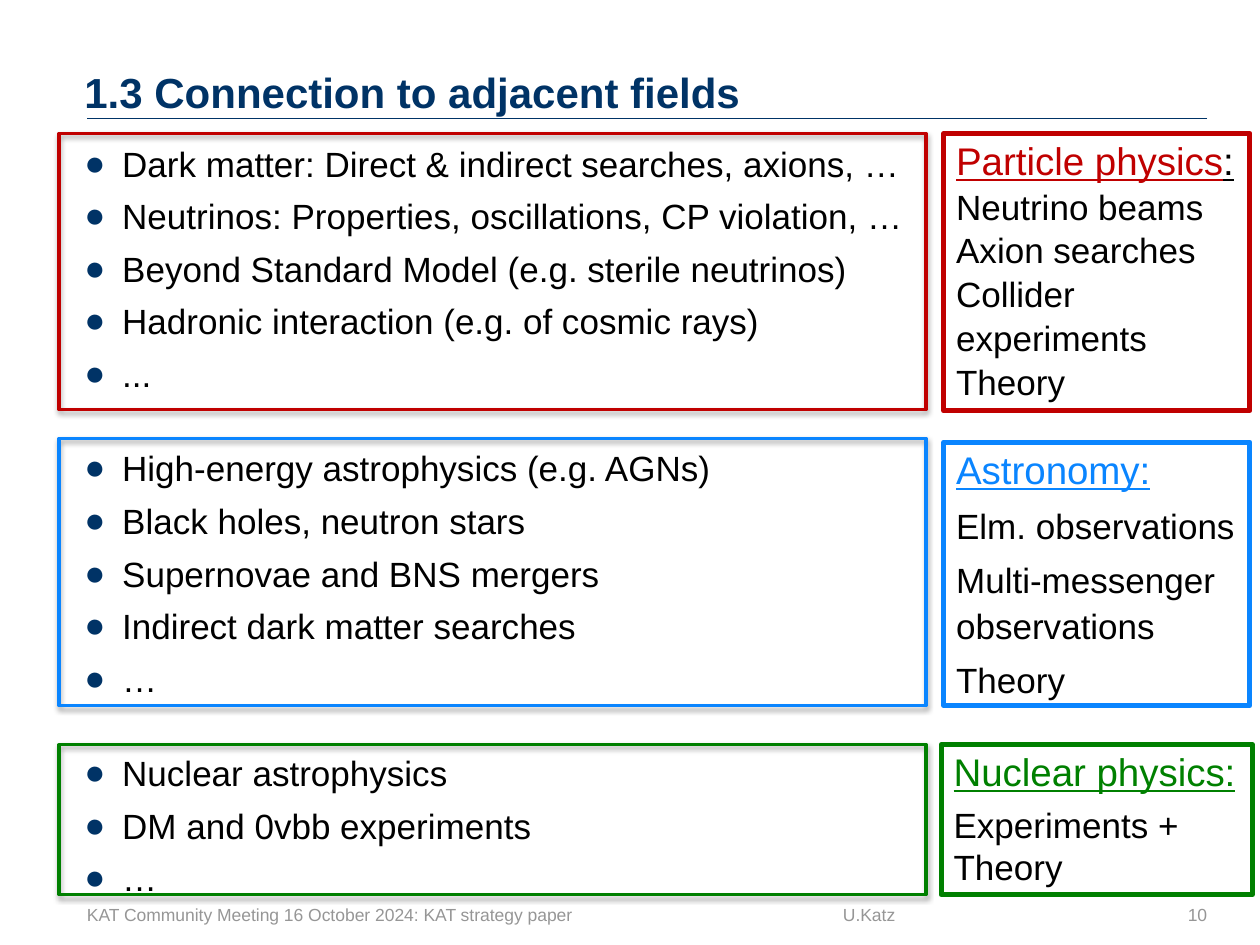
from lxml import etree
from pptx import Presentation
from pptx.dml.color import RGBColor
from pptx.enum.shapes import MSO_CONNECTOR, MSO_SHAPE
from pptx.enum.text import MSO_ANCHOR, MSO_AUTO_SIZE, PP_ALIGN
from pptx.oxml import parse_xml
from pptx.oxml.ns import qn
from pptx.util import Inches, Pt

STRAIGHT = MSO_CONNECTOR.STRAIGHT
RECTANGLE = MSO_SHAPE.RECTANGLE
TOP, MIDDLE, BOTTOM = MSO_ANCHOR.TOP, MSO_ANCHOR.MIDDLE, MSO_ANCHOR.BOTTOM
LEFT, RIGHT = PP_ALIGN.LEFT, PP_ALIGN.RIGHT
GROW = MSO_AUTO_SIZE.SHAPE_TO_FIT_TEXT

COLORS = {
    "navy": "003366",
    "gray": "969696",
    "black": "000000",
    "particle": "C00000",
    "astronomy": "0A85FF",
    "nuclear": "008000",
}

FIELDS = [
    {
        "color": "particle",
        "frame": (0.47, 1.06, 6.88, 2.19),
        "panel": (7.49, 1.06, 2.43, 2.2),
        "topics": [
            "Dark matter: Direct & indirect searches, axions, …",
            "Neutrinos: Properties, oscillations, CP violation, …",
            "Beyond Standard Model (e.g. sterile neutrinos)",
            "Hadronic interaction (e.g. of cosmic rays)",
            "...",
        ],
        "heading": [("Particle physics", "particle"), (":", "black")],
        "partners": ["Neutrino beams", "Axion searches",
                     "Collider\vexperiments", "Theory"],
        "format": {"line_spacing": Pt(25), "space_before": Pt(0)},
    },
    {
        "color": "astronomy",
        "frame": (0.47, 3.48, 6.88, 2.12),
        "panel": (7.49, 3.51, 2.43, 2.09),
        "topics": [
            "High-energy astrophysics (e.g. AGNs)",
            "Black holes, neutron stars",
            "Supernovae and BNS mergers",
            "Indirect dark matter searches",
            "…",
        ],
        "heading": [("Astronomy:", "astronomy")],
        "partners": ["Elm. observations", "Multi-messenger\vobservations", "Theory"],
        "format": {"line_spacing": Pt(26), "space_before": Pt(5)},
    },
    {
        "color": "nuclear",
        "frame": (0.47, 5.91, 6.88, 1.19),
        "panel": (7.47, 5.91, 2.47, 1.19),
        "topics": ["Nuclear astrophysics", "DM and 0vbb experiments", "…"],
        "heading": [("Nuclear physics:", "nuclear")],
        "partners": ["Experiments +\vTheory"],
        "format": {"line_spacing": 1.0, "space_before": Pt(5)},
    },
]


def rgb(name):
    return RGBColor.from_string(COLORS[name])


def apply(target, values):
    for attribute, value in values.items():
        setattr(target, attribute, value)


def style_runs(paragraph, size, color, **extra):
    for run in paragraph.runs:
        apply(run.font, {"name": "Arial", "size": Pt(size), **extra})
        run.font.color.rgb = rgb(color)


def add_text_frame(slide, box, anchor=TOP):
    frame = slide.shapes.add_textbox(*map(Inches, box)).text_frame
    apply(frame, {"word_wrap": True, "vertical_anchor": anchor, "margin_left": 0,
                  "margin_right": 0, "margin_top": 0, "margin_bottom": 0})
    return frame


def add_title(slide, box, text):
    left, top, width, height = box
    rule_y = Inches(top + height + 0.01)
    rule = slide.shapes.add_connector(
        STRAIGHT, Inches(left + width + 0.01), rule_y, Inches(left + 0.02), rule_y)
    rule.line.color.rgb = rgb("navy")
    rule.line.width = Pt(0.75)
    etree.SubElement(rule._element.spPr, qn("a:effectLst"))
    title = add_text_frame(slide, box, BOTTOM).paragraphs[0]
    apply(title, {"text": text, "line_spacing": Pt(28)})
    style_runs(title, 24, "navy", bold=True)


def add_footer(slide, box):
    left, top, width, height = box
    entries = [
        ("KAT Community Meeting 16 October 2024: KAT strategy paper", 0, 5.5, LEFT),
        ("U.Katz", 6, 1.45, LEFT),
        ("10", width - 0.49, 0.49, RIGHT),
    ]
    for text, offset, entry_width, alignment in entries:
        entry_box = (left + offset, top, entry_width, height)
        entry = add_text_frame(slide, entry_box, MIDDLE).paragraphs[0]
        apply(entry, {"text": text, "alignment": alignment})
        style_runs(entry, 10, "gray")


def add_bullet(paragraph):
    properties = paragraph._p.get_or_add_pPr()
    properties.set("marL", str(Inches(0.3)))
    properties.set("indent", str(-Inches(0.3)))
    color = etree.SubElement(properties, qn("a:buClr"))
    etree.SubElement(color, qn("a:srgbClr"), val=COLORS["navy"])
    etree.SubElement(properties, qn("a:buFont"), typeface="Arial")
    etree.SubElement(properties, qn("a:buChar"), char="●")


def add_topics(slide, box, groups):
    frame = add_text_frame(slide, box)
    for group_index, topics in enumerate(groups):
        for topic_index, topic in enumerate(topics):
            first = group_index == topic_index == 0
            paragraph = frame.paragraphs[0] if first else frame.add_paragraph()
            gap = 0 if first else 6 if topic_index else 30
            add_bullet(paragraph)
            apply(paragraph, {"text": topic, "line_spacing": Pt(24),
                              "space_before": Pt(gap)})
            style_runs(paragraph, 20, "black")


def add_outline(slide, box, color, width):
    outline = slide.shapes.add_shape(RECTANGLE, *map(Inches, box))
    outline.shadow.inherit = False
    outline.fill.background()
    outline.line.color.rgb = rgb(color)
    outline.line.width = Pt(width)
    return outline


def add_topic_frame(slide, box, color):
    outline = add_outline(slide, box, color, 2)
    effects = outline._element.spPr.find(qn("a:effectLst"))
    effects.append(parse_xml(
        '<a:outerShdw xmlns:a="http://schemas.openxmlformats.org/drawingml/2006/main"'
        f' blurRad="{Pt(3.1)}" dist="{Pt(1.8)}" dir="5400000" rotWithShape="0">'
        f'<a:srgbClr val="{COLORS["black"]}"><a:alpha val="35000"/></a:srgbClr>'
        '</a:outerShdw>'))


def add_partner_panel(slide, box, field):
    frame = add_outline(slide, box, field["color"], 3).text_frame
    apply(frame, {"word_wrap": False, "auto_size": GROW, "vertical_anchor": TOP})
    heading = frame.paragraphs[0]
    apply(heading, {"alignment": LEFT, "line_spacing": Pt(25)})
    for text, color in field["heading"]:
        run = heading.add_run()
        run.text = text
        apply(run.font, {"name": "Arial", "size": Pt(22), "underline": True})
        run.font.color.rgb = rgb(color)
    for partner in field["partners"]:
        paragraph = frame.add_paragraph()
        apply(paragraph, {"text": partner, "alignment": LEFT, **field["format"]})
        style_runs(paragraph, 20, "black")


def main():
    deck = Presentation()
    deck.slide_width, deck.slide_height = Inches(10), Inches(7.5)
    slide = deck.slides.add_slide(deck.slide_layouts[6])
    add_title(slide, (0.67, 0.54, 8.9, 0.39), "1.3 Connection to adjacent fields")
    add_footer(slide, (0.69, 7.01, 8.89, 0.49))
    add_topics(slide, (0.67, 1.13, 9.17, 4.96), [field["topics"] for field in FIELDS])
    for field in FIELDS:
        add_topic_frame(slide, field["frame"], field["color"])
        add_partner_panel(slide, field["panel"], field)
    deck.save("out.pptx")


if __name__ == "__main__":
    main()
